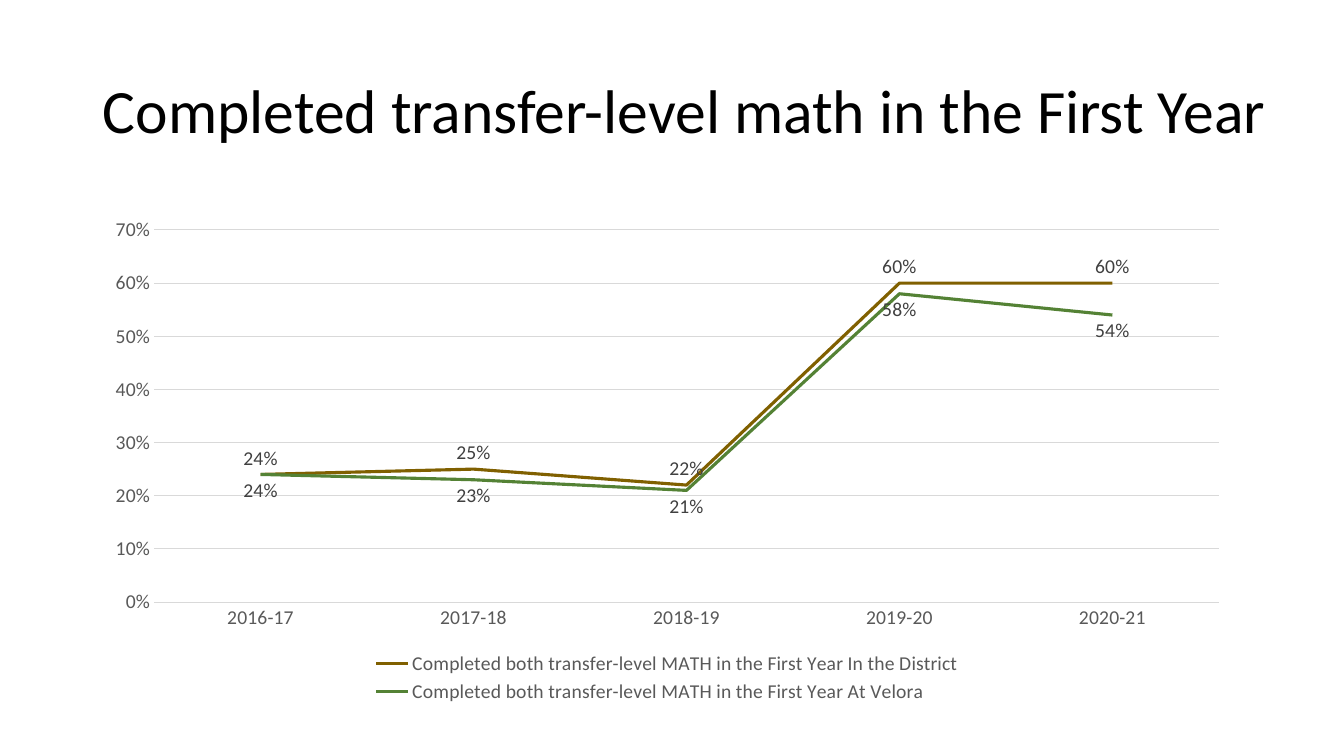
from dataclasses import dataclass

from pptx import Presentation
from pptx.chart.data import CategoryChartData
from pptx.dml.color import RGBColor
from pptx.enum.chart import XL_CHART_TYPE, XL_LABEL_POSITION, XL_LEGEND_POSITION, XL_TICK_MARK
from pptx.enum.text import MSO_ANCHOR, MSO_AUTO_SIZE, PP_ALIGN
from pptx.util import Inches, Pt

LINE = XL_CHART_TYPE.LINE
ABOVE, BELOW = XL_LABEL_POSITION.ABOVE, XL_LABEL_POSITION.BELOW
BOTTOM = XL_LEGEND_POSITION.BOTTOM
NO_TICK = XL_TICK_MARK.NONE
MIDDLE = MSO_ANCHOR.MIDDLE
NO_FIT = MSO_AUTO_SIZE.NONE
LEFT = PP_ALIGN.LEFT


@dataclass(frozen=True)
class Theme:
    font: str = "Calibri"
    title_size: int = 44
    chart_size: int = 14
    title: str = "000000"
    axis: str = "595959"
    label: str = "404040"
    grid: str = "D9D9D9"
    district: str = "806000"
    college: str = "548235"
    grid_width: float = 0.75
    series_width: float = 2.25


THEME = Theme()
WIDTH, HEIGHT = Inches(13.33), Inches(7.5)
TITLE_PERCENT = (6.9, 5.33, 89.65, 19.33)
CHART_PERCENT = (6.9, 27.5, 85.5, 66.13)
YEARS = ["2016-17", "2017-18", "2018-19", "2019-20", "2020-21"]
MEASURE = "Completed both transfer-level MATH in the First Year"
SERIES = [
    (f"{MEASURE} In the District", (0.24, 0.25, 0.22, 0.6, 0.6), THEME.district, ABOVE),
    (f"{MEASURE} At Velora", (0.24, 0.23, 0.21, 0.58, 0.54), THEME.college, BELOW),
]


def box(percents):
    return [int(percent * side / 100) for percent, side in zip(percents, (WIDTH, HEIGHT) * 2)]


def apply(target, values):
    for name, value in values.items():
        setattr(target, name, value)


def style_font(font, size, color):
    apply(font, {"name": THEME.font, "size": Pt(size), "bold": False})
    font.color.rgb = RGBColor.from_string(color)


def style_line(line, color, width):
    line.color.rgb = RGBColor.from_string(color)
    line.width = Pt(width)


def add_title(s, text):
    sp = s.shapes.title
    apply(sp, dict(zip(("left", "top", "width", "height"), box(TITLE_PERCENT))))
    tf = sp.text_frame
    apply(tf, {"word_wrap": True, "auto_size": NO_FIT, "vertical_anchor": MIDDLE})
    p = tf.paragraphs[0]
    apply(p, {"alignment": LEFT, "line_spacing": 0.9})
    r = p.add_run()
    r.text = text
    style_font(r.font, THEME.title_size, THEME.title)


def style_axes(chart):
    for axis in (chart.category_axis, chart.value_axis):
        apply(axis, {"major_tick_mark": NO_TICK, "minor_tick_mark": NO_TICK})
        style_font(axis.tick_labels.font, THEME.chart_size, THEME.axis)
    style_line(chart.category_axis.format.line, THEME.grid, THEME.grid_width)
    values = chart.value_axis
    apply(values, {"minimum_scale": 0, "maximum_scale": 0.7, "major_unit": 0.1})
    apply(values.tick_labels, {"number_format": "0%", "number_format_is_linked": False})
    values.format.line.fill.background()
    style_line(values.major_gridlines.format.line, THEME.grid, THEME.grid_width)


def style_series(series, color, position):
    series.smooth = False
    style_line(series.format.line, color, THEME.series_width)
    labels = series.data_labels
    apply(labels, {
        "show_value": True,
        "position": position,
        "number_format": "0%",
        "number_format_is_linked": False,
    })
    style_font(labels.font, THEME.chart_size, THEME.label)


def add_line_chart(s):
    data = CategoryChartData(number_format="0%")
    data.categories = YEARS
    for name, values, _, _ in SERIES:
        data.add_series(name, values)
    chart = s.shapes.add_chart(LINE, *box(CHART_PERCENT), data).chart
    apply(chart, {"has_title": False, "has_legend": True})
    style_font(chart.font, THEME.chart_size, THEME.title)
    apply(chart.legend, {"position": BOTTOM, "include_in_layout": False})
    style_font(chart.legend.font, THEME.chart_size, THEME.axis)
    style_axes(chart)
    plot = chart.plots[0]
    plot.vary_by_categories = False
    for series, (_, _, color, position) in zip(plot.series, SERIES):
        style_series(series, color, position)


def main():
    prs = Presentation()
    apply(prs, {"slide_width": WIDTH, "slide_height": HEIGHT})
    s = prs.slides.add_slide(prs.slide_layouts[5])
    add_title(s, "Completed transfer-level math in the First Year")
    add_line_chart(s)
    prs.save("out.pptx")


if __name__ == "__main__":
    main()
